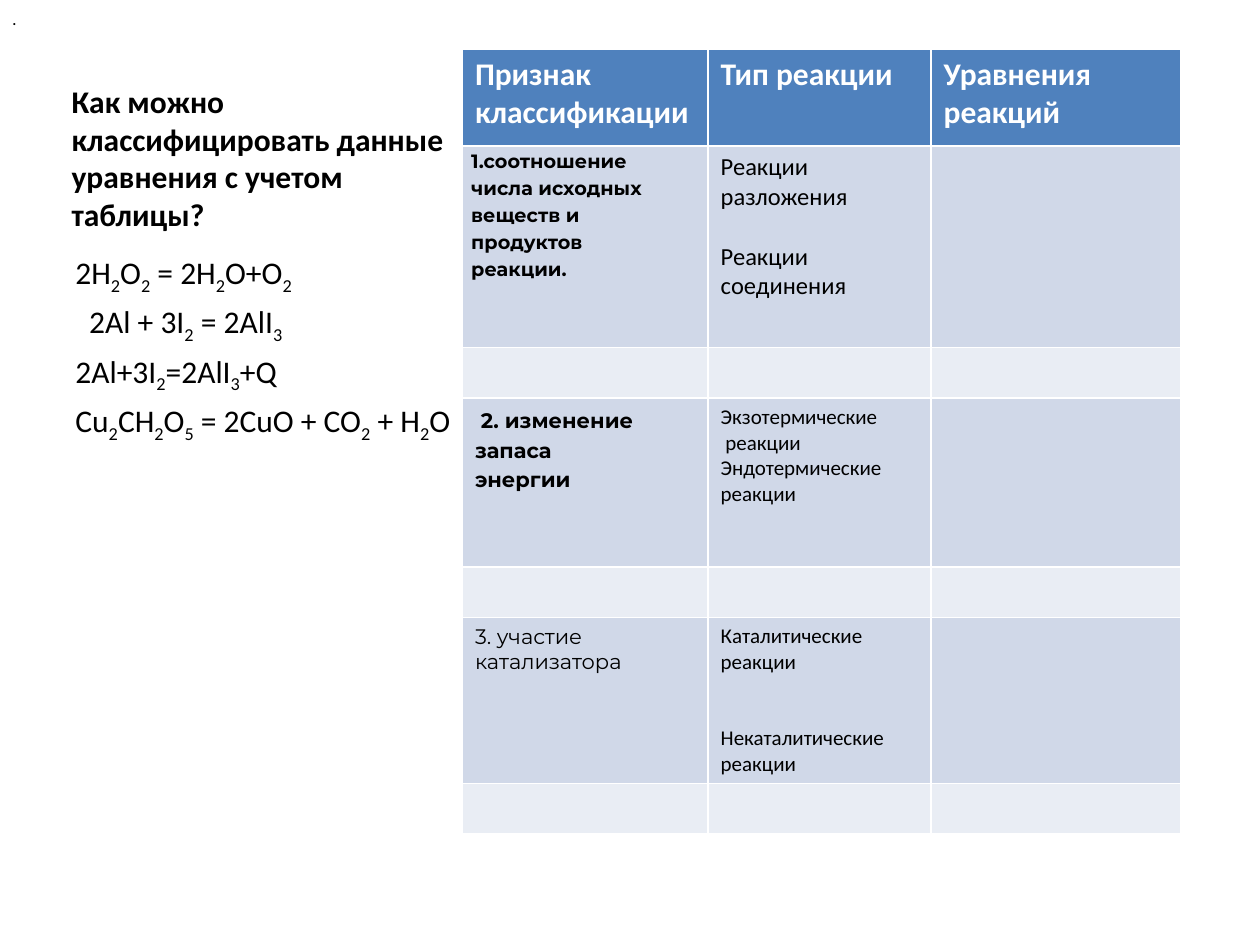
from dataclasses import dataclass
from itertools import groupby
from typing import Any

from pptx import Presentation
from pptx.dml.color import RGBColor
from pptx.enum.text import MSO_ANCHOR
from pptx.util import Inches, Pt

BLACK, WHITE = "000000", "FFFFFF"
HEADER_FILL, FILLED_ROW, EMPTY_ROW = "4F81BD", "D0D8E8", "E9EDF4"


@dataclass
class Entry:
    """Text of one table cell with its format."""
    lines: list[str]
    size: float = 12
    font: str = "Calibri"
    bold: bool = False
    line_spacing: float = 1.0
    gap: float = 0
    margin_left: float = 0.1
    margin_top: float = 0.05
    margin_right: float = 0.1


@dataclass
class Row:
    height: float
    sign: Entry
    kind: Entry


COLUMN_WIDTHS = [1.95, 1.77, 1.98]
HEADINGS = ["Признак классификации", "Тип реакции", "Уравнения реакций"]
HEADER_HEIGHT, GAP_HEIGHT = 0.77, 0.4
ROWS = [
    Row(1.6,
        Entry(["1.соотношение числа исходных веществ и продуктов реакции."], 11, "Montserrat",
              True, 1.15, margin_left=0.07, margin_top=0, margin_right=0.37),
        Entry(["Реакции разложения", "Реакции соединения"], 14, gap=17)),
    Row(1.34,
        Entry([" 2. изменение запаса энергии"], 12, "Montserrat", True, 1.15, margin_right=0.55),
        Entry(["Экзотермические", " реакции", "Эндотермические реакции"])),
    Row(1.32,
        Entry(["3. участие катализатора"], 12, "Montserrat"),
        Entry(["Каталитические реакции", "Некаталитические реакции"], gap=29)),
]
EQUATIONS = ["2H2O2 = 2H2O+O2", "2Al + 3I2 = 2AlI3", "2Al+3I2=2AlI3+Q",
             "Cu2CH2O5 = 2CuO + CO2 + H2O"]


def color(value: str) -> RGBColor:
    return RGBColor.from_string(value)


def formula_parts(text: str) -> list[tuple[str, bool]]:
    """Split a formula into pieces; a digit right after a letter is a subscript."""
    marked = [(char, char.isdigit() and before.isalpha())
              for before, char in zip(" " + text, text)]
    return [("".join(char for char, _ in group), lowered)
            for lowered, group in groupby(marked, key=lambda pair: pair[1])]


def write(frame: Any, lines: list[str], *, size: float, font: str = "Calibri",
          fill: str = BLACK, bold: bool = False, line_spacing: float = 1.0,
          gap: float = 0, formula: bool = False) -> None:
    for index, line in enumerate(lines):
        para = frame.add_paragraph() if index else frame.paragraphs[0]
        para.line_spacing = line_spacing
        para.space_before = Pt(gap if index else 0)
        for text, lowered in formula_parts(line) if formula else [(line, False)]:
            span = para.add_run()
            span.text = text
            span.font.size = Pt(size)
            span.font.name = font
            span.font.bold = bold
            span.font.color.rgb = color(fill)
            if lowered:
                span.font._element.set("baseline", "-25000")


def add_box(page: Any, left: float, top: float, width: float, height: float,
            wrap: bool = True) -> Any:
    box = page.shapes.add_textbox(Inches(left), Inches(top), Inches(width), Inches(height))
    box.text_frame.word_wrap = wrap
    return box.text_frame


def fill_cell(cell: Any, fill: str) -> None:
    cell.fill.solid()
    cell.fill.fore_color.rgb = color(fill)


def write_entry(cell: Any, entry: Entry) -> None:
    cell.margin_left = Inches(entry.margin_left)
    cell.margin_right = Inches(entry.margin_right)
    cell.margin_top = Inches(entry.margin_top)
    write(cell.text_frame, entry.lines, size=entry.size, font=entry.font, bold=entry.bold,
          line_spacing=entry.line_spacing, gap=entry.gap)


def add_reaction_table(page: Any) -> None:
    """Header, then each filled row followed by a narrow empty one."""
    heights = [HEADER_HEIGHT] + [height for row in ROWS for height in (row.height, GAP_HEIGHT)]
    table = page.shapes.add_table(
        len(heights), len(COLUMN_WIDTHS), Inches(3.67), Inches(0.39),
        Inches(sum(COLUMN_WIDTHS)), Inches(sum(heights))).table
    table.horz_banding = False
    for column, width in zip(table.columns, COLUMN_WIDTHS):
        column.width = Inches(width)
    for index, height in enumerate(heights):
        table.rows[index].height = Inches(height)
        fill = FILLED_ROW if index % 2 else EMPTY_ROW
        for cell in table.rows[index].cells:
            fill_cell(cell, fill if index else HEADER_FILL)
    for cell, heading in zip(table.rows[0].cells, HEADINGS):
        write(cell.text_frame, [heading], size=18, fill=WHITE, bold=True)
    for index, row in enumerate(ROWS):
        write_entry(table.cell(2 * index + 1, 0), row.sign)
        write_entry(table.cell(2 * index + 1, 1), row.kind)


def main() -> None:
    deck = Presentation()
    deck.slide_width, deck.slide_height = Inches(10), Inches(7.5)
    page = deck.slides.add_slide(deck.slide_layouts[6])

    write(add_box(page, 0.47, 0.6, 3.29, 1.56),
          ["Как можно классифицировать данные уравнения с учетом таблицы?"], size=18, bold=True)

    equations = add_box(page, 0.5, 1.96, 3.29, 4.74)
    write(equations, EQUATIONS, size=18, gap=3.6, formula=True)
    equations.paragraphs[1]._p.get_or_add_pPr().set("marL", str(Inches(0.11)))

    add_reaction_table(page)

    dot = add_box(page, 0, 0, 0.3, 0.29, wrap=False)
    dot.vertical_anchor = MSO_ANCHOR.MIDDLE
    write(dot, ["."], size=11, font="Montserrat")

    deck.save("out.pptx")


if __name__ == "__main__":
    main()
